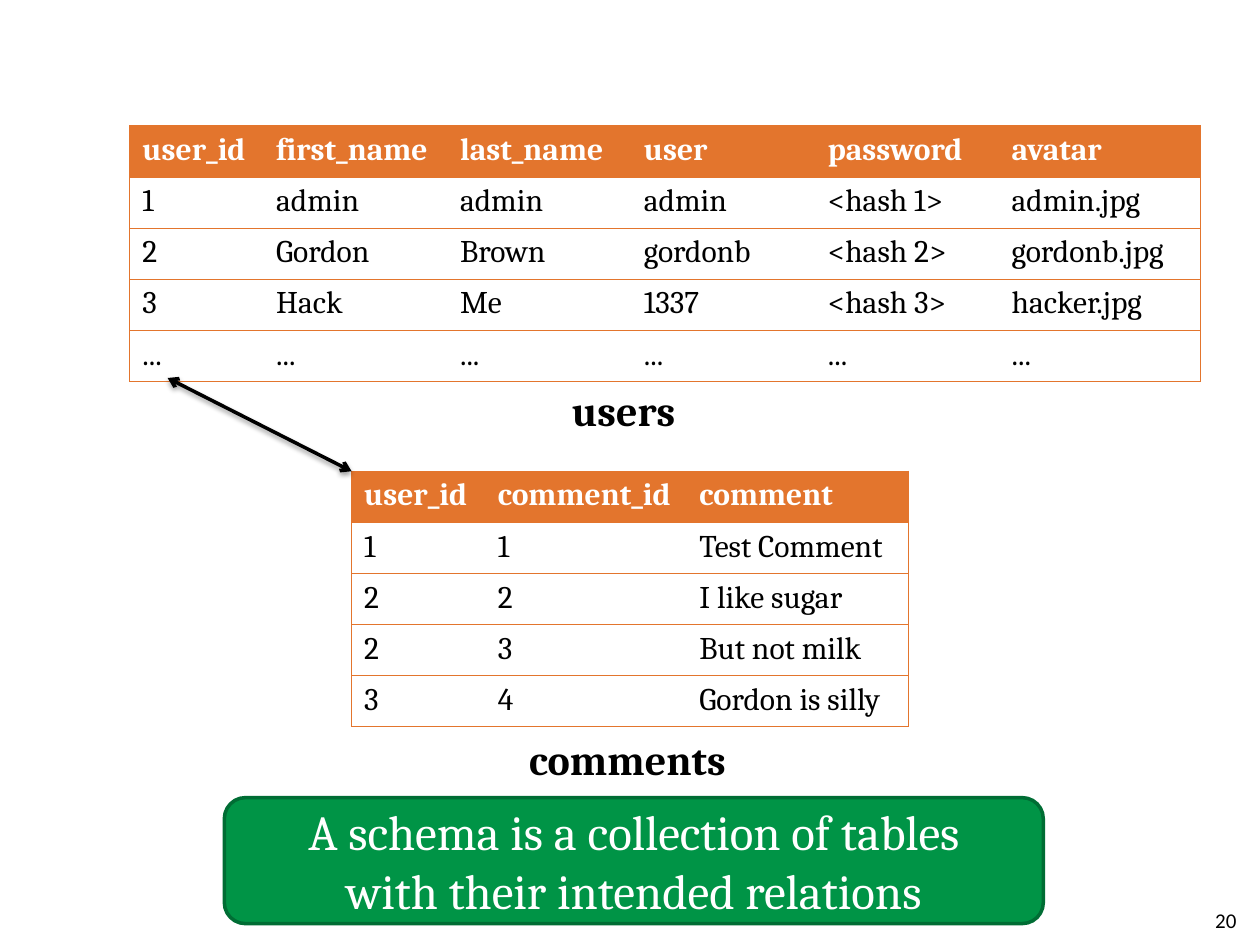
from dataclasses import dataclass

import pptx
import pptx.dml.color
import pptx.enum.shapes
import pptx.enum.text
import pptx.oxml
import pptx.oxml.ns
import pptx.util

Pt = pptx.util.Pt
ALIGN = pptx.enum.text.PP_ALIGN
MIDDLE = pptx.enum.text.MSO_ANCHOR.MIDDLE
COLORS = {
    "orange": "E3752D",
    "green": "009446",
    "dark_green": "006D34",
    "white": "FFFFFF",
    "black": "000000",
}
ROW_HEIGHT = 29.2
BORDER = 0.75


@dataclass
class TableSpec:
    left: float
    top: float
    widths: list[float]
    rows: list[list[str]]


@dataclass
class Label:
    text: str
    left: float
    top: float
    width: float
    height: float
    size: float = 24
    font: str = "Cambria"
    bold: bool = True
    wrap: bool = False
    align: ALIGN = ALIGN.LEFT


TABLES = [
    TableSpec(74.2, 72, [76.4, 105.1, 105.1, 105.1, 105.1, 115.2], [
        ["user_id", "first_name", "last_name", "user", "password", "avatar"],
        ["1", "admin", "admin", "admin", "<hash 1>", "admin.jpg"],
        ["2", "Gordon", "Brown", "gordonb", "<hash 2>", "gordonb.jpg"],
        ["3", "Hack", "Me", "1337", "<hash 3>", "hacker.jpg"],
        ["..."] * 6,
    ]),
    TableSpec(200.9, 269.3, [76.4, 115.2, 126.7], [
        ["user_id", "comment_id", "comment"],
        ["1", "1", "Test Comment"],
        ["2", "2", "I like sugar"],
        ["2", "3", "But not milk"],
        ["3", "4", "Gordon is silly"],
    ]),
]
LABELS = [
    Label("users", 319.7, 216, 75.6, 36),
    Label("comments", 295.2, 415.4, 130.3, 36),
    Label("20", 545.8, 511.2, 167.8, 28.8, 12, "Calibri", False, True, ALIGN.RIGHT),
]


def rgb(name: str) -> pptx.dml.color.RGBColor:
    return pptx.dml.color.RGBColor.from_string(COLORS[name])


def format_text(tf, size: float, color: str, font: str = "Cambria",
                bold: bool = False, align: ALIGN = ALIGN.LEFT) -> None:
    for p in tf.paragraphs:
        p.alignment = align
        for r in p.runs:
            r.font.size = Pt(size)
            r.font.name = font
            r.font.bold = bold
            r.font.color.rgb = rgb(color)


def set_borders(cell, visible: dict[str, bool]) -> None:
    tc_pr = cell._tc.get_or_add_tcPr()
    for i, (side, shown) in enumerate(visible.items()):
        paint = (f'<a:solidFill><a:srgbClr val="{COLORS["orange"]}"/></a:solidFill>'
                 if shown else "<a:noFill/>")
        tc_pr.insert(i, pptx.oxml.parse_xml(
            f'<a:ln{side} {pptx.oxml.ns.nsdecls("a")} w="{Pt(BORDER)}">{paint}</a:ln{side}>'))


def add_table(s, spec: TableSpec) -> None:
    n_rows, n_cols = len(spec.rows), len(spec.widths)
    table = s.shapes.add_table(n_rows, n_cols, Pt(spec.left), Pt(spec.top),
                               Pt(sum(spec.widths)), Pt(ROW_HEIGHT * n_rows)).table
    table.horz_banding = False
    for column, width in zip(table.columns, spec.widths):
        column.width = Pt(width)
    for i, values in enumerate(spec.rows):
        table.rows[i].height = Pt(ROW_HEIGHT)
        header = i == 0
        for j, value in enumerate(values):
            cell = table.cell(i, j)
            cell.text_frame.text = value
            format_text(cell.text_frame, 18, "white" if header else "black", bold=header)
            if header:
                cell.fill.solid()
                cell.fill.fore_color.rgb = rgb("orange")
            else:
                cell.fill.background()
            set_borders(cell, {"L": j == 0, "R": j == n_cols - 1, "T": True, "B": True})


def add_label(s, label: Label) -> None:
    sp = s.shapes.add_textbox(Pt(label.left), Pt(label.top), Pt(label.width), Pt(label.height))
    tf = sp.text_frame
    tf.word_wrap = label.wrap
    tf.vertical_anchor = MIDDLE if label.wrap else pptx.enum.text.MSO_ANCHOR.TOP
    tf.text = label.text
    format_text(tf, label.size, "black", label.font, label.bold, label.align)


def add_banner(s, text: str) -> None:
    sp = s.shapes.add_shape(pptx.enum.shapes.MSO_SHAPE.ROUNDED_RECTANGLE,
                            Pt(128.2), Pt(455.8), Pt(468), Pt(72))
    sp.shadow.inherit = False
    sp.fill.solid()
    sp.fill.fore_color.rgb = rgb("green")
    sp.line.color.rgb = rgb("dark_green")
    sp.line.width = Pt(2)
    tf = sp.text_frame
    tf.word_wrap = True
    tf.vertical_anchor = MIDDLE
    tf.text = text
    format_text(tf, 28, "white", align=ALIGN.CENTER)


def add_relation_arrow(s, x1: float, y1: float, x2: float, y2: float) -> None:
    line = s.shapes.add_connector(pptx.enum.shapes.MSO_CONNECTOR.STRAIGHT,
                                  Pt(x1), Pt(y1), Pt(x2), Pt(y2))
    line.line.color.rgb = rgb("black")
    line.line.width = Pt(2)
    ns = pptx.oxml.ns.nsdecls("a")
    ln = line.line._get_or_add_ln()
    for end in ("headEnd", "tailEnd"):
        ln.append(pptx.oxml.parse_xml(f'<a:{end} {ns} type="arrow"/>'))
    # Soft shadow straight below the line
    line._element.spPr.append(pptx.oxml.parse_xml(
        f'<a:effectLst {ns}><a:outerShdw blurRad="{Pt(3.1)}" dist="{Pt(1.6)}" dir="5400000" '
        f'rotWithShape="0"><a:srgbClr val="{COLORS["black"]}"><a:alpha val="38000"/>'
        '</a:srgbClr></a:outerShdw></a:effectLst>'))


def main() -> None:
    prs = pptx.Presentation()
    prs.slide_width, prs.slide_height = Pt(720), Pt(540)
    s = prs.slides.add_slide(prs.slide_layouts[6])

    # Schema statement
    add_banner(s, "A schema is a collection of tables\vwith their intended relations")

    # Tables with their names, and the page number
    for spec in TABLES:
        add_table(s, spec)
    for label in LABELS:
        add_label(s, label)

    # Relation between the user_id columns
    add_relation_arrow(s, 95.8, 216, TABLES[1].left, TABLES[1].top)

    prs.save("out.pptx")


if __name__ == "__main__":
    main()
